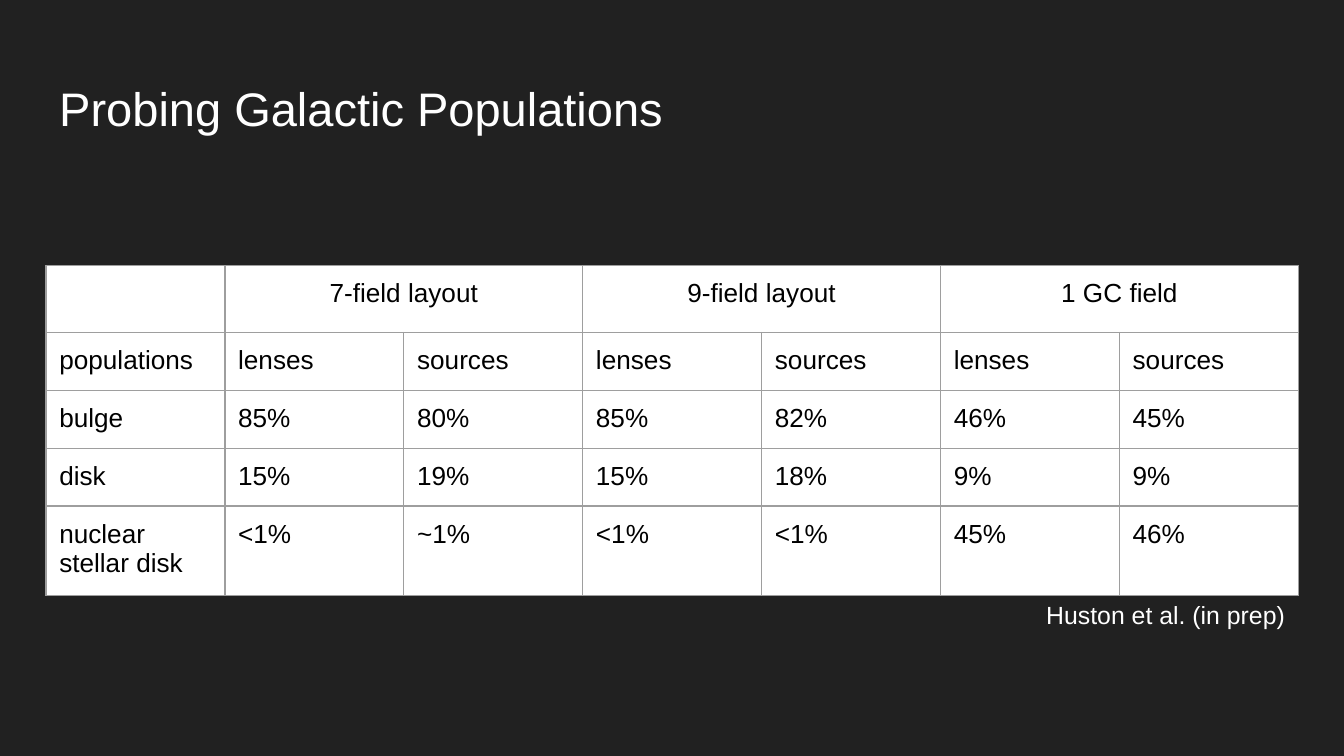
from dataclasses import dataclass

import pptx
import pptx.dml.color
import pptx.enum.text
import pptx.oxml
import pptx.oxml.ns
import pptx.util

Cm, Pt = pptx.util.Cm, pptx.util.Pt
RGB = pptx.dml.color.RGBColor.from_string
ALIGN = pptx.enum.text.PP_ALIGN
ANCHOR = pptx.enum.text.MSO_ANCHOR


@dataclass(frozen=True)
class Theme:
    font: str = "Arial"
    background: str = "212121"
    light: str = "FFFFFF"
    dark: str = "000000"
    border: str = "9E9E9E"
    border_width: float = 0.75
    title_size: float = 25.2
    table_size: float = 14
    credit_size: float = 13.3


THEME = Theme()
INSET = Cm(0.25)
LEFT, WIDTH = Cm(0.87), Cm(23.67)

LAYOUTS = ["7-field layout", "9-field layout", "1 GC field"]
ROWS = [
    ["populations"] + ["lenses", "sources"] * len(LAYOUTS),
    ["bulge", "85%", "80%", "85%", "82%", "46%", "45%"],
    ["disk", "15%", "19%", "15%", "18%", "9%", "9%"],
    ["nuclear stellar disk", "<1%", "~1%", "<1%", "<1%", "45%", "46%"],
]
ROW_HEIGHTS = [1.21, 1.07, 1.07, 1.07, 1.61]


def style_paragraph(p, size, color, align):
    p.alignment = align
    for r in p.runs:
        r.font.name = THEME.font
        r.font.size = Pt(size)
        r.font.color.rgb = RGB(color)


def set_margins(target):
    for side in ("left", "right", "top", "bottom"):
        setattr(target, f"margin_{side}", INSET)


def add_text(s, box, text, size, align=ALIGN.LEFT, anchor=ANCHOR.TOP):
    tf = s.shapes.add_textbox(*box).text_frame
    tf.word_wrap = True
    tf.vertical_anchor = anchor
    set_margins(tf)
    tf.text = text
    p = tf.paragraphs[0]
    style_paragraph(p, size, THEME.light, align)
    return p


def add_borders(cell):
    tc_pr = cell._tc.get_or_add_tcPr()
    for side in "LRTB":
        tc_pr.append(pptx.oxml.parse_xml(
            f'<a:ln{side} {pptx.oxml.ns.nsdecls("a")} w="{Pt(THEME.border_width)}">'
            f'<a:solidFill><a:srgbClr val="{THEME.border}"/></a:solidFill>'
            f'</a:ln{side}>'))


def write_cell(cell, text, align=ALIGN.LEFT):
    cell.text = text
    style_paragraph(cell.text_frame.paragraphs[0], THEME.table_size, THEME.dark, align)


def add_population_table(s):
    n_rows, n_cols = len(ROWS) + 1, len(ROWS[0])
    table = s.shapes.add_table(n_rows, n_cols, LEFT, Cm(5.02), WIDTH,
                               Cm(sum(ROW_HEIGHTS))).table
    table.first_row = table.horz_banding = False
    for row, height in zip(table.rows, ROW_HEIGHTS):
        row.height = Cm(height)
    for cell in table.iter_cells():
        set_margins(cell)
        add_borders(cell)
        cell.fill.solid()
        cell.fill.fore_color.rgb = RGB(THEME.light)

    # Each layout heading spans its lenses and sources columns
    for i, layout in enumerate(LAYOUTS):
        col = 1 + 2 * i
        table.cell(0, col).merge(table.cell(0, col + 1))
        write_cell(table.cell(0, col), layout, ALIGN.CENTER)
    for i, values in enumerate(ROWS, start=1):
        for j, value in enumerate(values):
            write_cell(table.cell(i, j), value)


def main():
    prs = pptx.Presentation()
    prs.slide_width, prs.slide_height = Cm(25.4), Cm(14.29)
    s = prs.slides.add_slide(prs.slide_layouts[6])
    s.background.fill.solid()
    s.background.fill.fore_color.rgb = RGB(THEME.background)

    # Title
    add_text(s, (LEFT, Cm(1.24), WIDTH, Cm(1.6)), "Probing Galactic Populations",
             THEME.title_size, anchor=ANCHOR.MIDDLE)

    # Population shares
    add_population_table(s)

    # Credit
    p = add_text(s, (Cm(16.21), Cm(11.13), Cm(8.33), Cm(1.04)),
                 "Huston et al. (in prep)", THEME.credit_size, ALIGN.RIGHT)
    p.line_spacing = 0.95
    p.space_after = Pt(12)

    prs.save("out.pptx")


if __name__ == "__main__":
    main()
